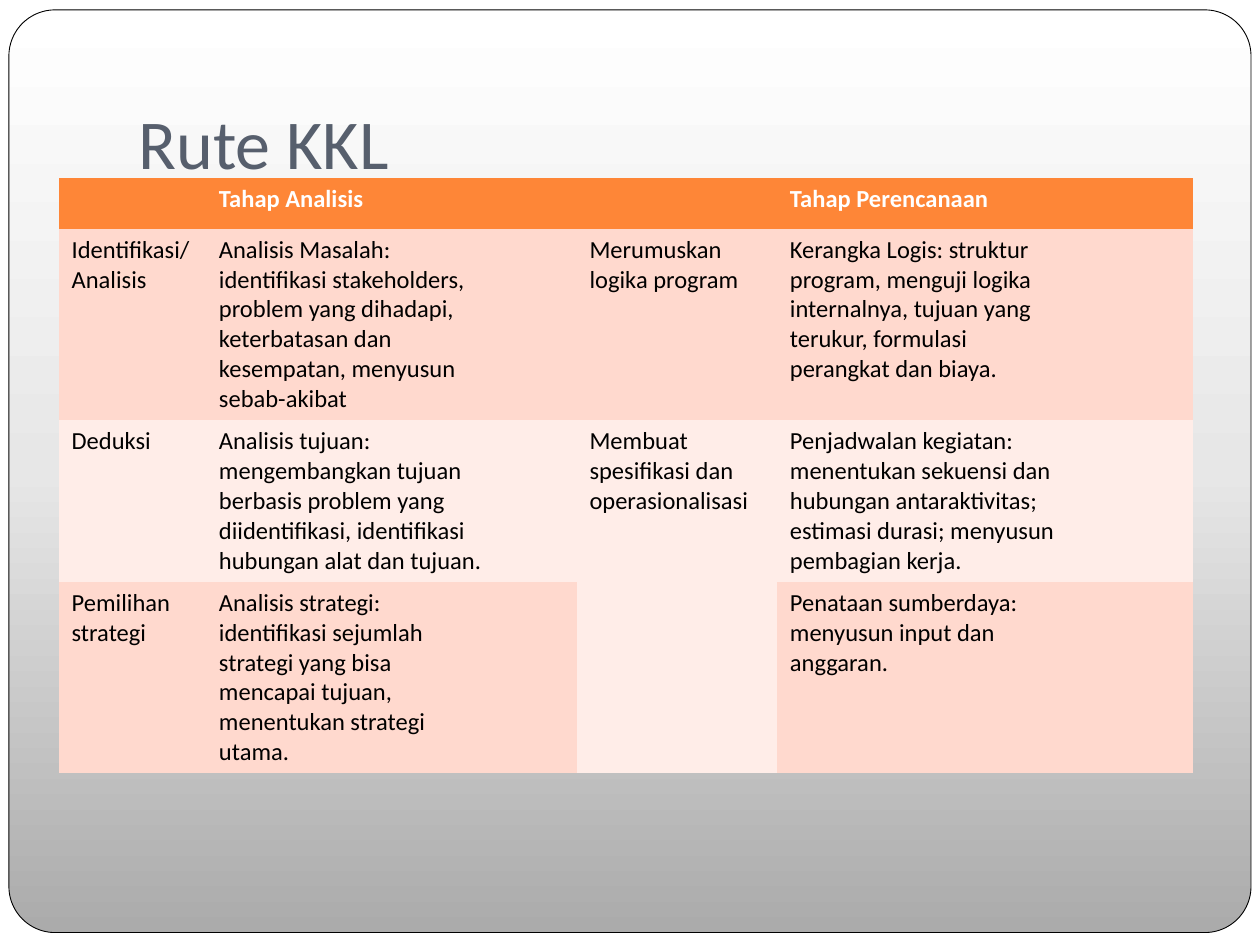
from copy import deepcopy

from pptx import Presentation
from pptx.dml.color import RGBColor
from pptx.enum.shapes import MSO_SHAPE as SHAPE
from pptx.enum.text import MSO_ANCHOR as ANCHOR, MSO_AUTO_SIZE as AUTOSIZE, PP_ALIGN as ALIGN
from pptx.oxml.ns import qn
from pptx.util import Cm, Pt

PANEL_STOPS = [(0, "ABABAB"), (0.5, "E7E7E7"), (1, "FFFFFF")]
COL_WIDTHS = [2.97, 7.47, 4.04, 8.38]
ROW_HEIGHT = 1.03
ROWS = [
    ["", "Tahap Analisis", "", "Tahap Perencanaan"],
    ["Identifikasi/\nAnalisis",
     "Analisis Masalah:\nidentifikasi stakeholders,\nproblem yang dihadapi,\n"
     "keterbatasan dan\nkesempatan, menyusun\nsebab-akibat",
     "Merumuskan\nlogika program",
     "Kerangka Logis: struktur\nprogram, menguji logika\ninternalnya, tujuan yang\n"
     "terukur, formulasi\nperangkat dan biaya."],
    ["Deduksi",
     "Analisis tujuan:\nmengembangkan tujuan\nberbasis problem yang\n"
     "diidentifikasi, identifikasi\nhubungan alat dan tujuan.",
     "Membuat\nspesifikasi dan\noperasionalisasi",
     "Penjadwalan kegiatan:\nmenentukan sekuensi dan\nhubungan antaraktivitas;\n"
     "estimasi durasi; menyusun\npembagian kerja."],
    ["Pemilihan strategi",
     "Analisis strategi:\nidentifikasi sejumlah\nstrategi yang bisa\n"
     "mencapai tujuan,\nmenentukan strategi\nutama.",
     "",
     "Penataan sumberdaya:\nmenyusun input dan\nanggaran."],
]


def rgb(color):
    return RGBColor.from_string(color)


class SlideBuilder:
    title_font = {"name": "Calibri", "size": Pt(40), "bold": False, "color": "575F6D"}
    head_font = {"name": "Calibri", "size": Pt(14), "bold": True, "color": "FFFFFF"}
    body_font = {**head_font, "bold": False, "color": "000000"}
    head_fill = "FE8637"
    band_fills = ["FFD9CE", "FFEDE8"]

    def __init__(self, s):
        self.s = s

    def set_text(self, tf, text, font):
        tf.text = text
        for p in tf.paragraphs:
            p.alignment = ALIGN.LEFT
            for r in p.runs:
                for key, value in font.items():
                    if key == "color":
                        r.font.color.rgb = rgb(value)
                    else:
                        setattr(r.font, key, value)

    def background(self, color):
        fill = self.s.background.fill
        fill.solid()
        fill.fore_color.rgb = rgb(color)

    def panel(self, x, y, w, h, stops):
        sp = self.s.shapes.add_shape(SHAPE.ROUNDED_RECTANGLE, Cm(x), Cm(y), Cm(w), Cm(h))
        sp.adjustments[0] = 0.05
        sp.shadow.inherit = False
        sp.line.color.rgb = rgb("000000")
        sp.line.width = Pt(0.5)
        # The default gradient has two stops, so add the third
        sp.fill.gradient()
        sp.fill.gradient_angle = 90
        gs_list = sp.element.spPr.find(".//" + qn("a:gsLst"))
        gs_list.append(deepcopy(gs_list[0]))
        for stop, (position, color) in zip(sp.fill.gradient_stops, stops):
            stop.position = position
            stop.color.rgb = rgb(color)
        # Keep the panel behind the title
        self.s.shapes.title.element.addprevious(sp.element)

    def title(self, text, x, y, w, h):
        sp = self.s.shapes.title
        sp.left, sp.top, sp.width, sp.height = Cm(x), Cm(y), Cm(w), Cm(h)
        tf = sp.text_frame
        layout = {"vertical_anchor": ANCHOR.BOTTOM, "auto_size": AUTOSIZE.NONE,
                  "word_wrap": True, "margin_bottom": Cm(0.25)}
        for key, value in layout.items():
            setattr(tf, key, value)
        self.set_text(tf, text, self.title_font)

    def table(self, rows, x, y, widths, row_height, merges):
        frame = self.s.shapes.add_table(len(rows), len(widths), Cm(x), Cm(y),
                                        Cm(sum(widths)), Cm(row_height * len(rows)))
        table = frame.table
        for column, width in zip(table.columns, widths):
            column.width = Cm(width)
        for i, row in enumerate(rows):
            table.rows[i].height = Cm(row_height)
            color = self.band_fills[(i - 1) % 2] if i else self.head_fill
            font = self.body_font if i else self.head_font
            for j, text in enumerate(row):
                cell = table.cell(i, j)
                cell.fill.solid()
                cell.fill.fore_color.rgb = rgb(color)
                self.set_text(cell.text_frame, text, font)
        for first, last in merges:
            table.cell(*first).merge(table.cell(*last))
        # Use the plain style, which draws no cell borders
        style = frame.element.find(".//" + qn("a:tableStyleId"))
        style.text = "{2D5ABB26-0587-4C30-8999-92F81FD0307C}"


def main():
    prs = Presentation()
    prs.slide_width, prs.slide_height = Cm(25.4), Cm(19.05)
    b = SlideBuilder(prs.slides.add_slide(prs.slide_layouts[5]))

    # Backdrop
    b.background("FFFFFF")
    b.panel(0.18, 0.2, 25.04, 18.6, PANEL_STOPS)

    # Title and route table
    b.title("Rute KKL", 2.54, 0.76, 21.59, 3.18)
    b.table(ROWS, 1.19, 3.58, COL_WIDTHS, ROW_HEIGHT, merges=[((2, 2), (3, 2))])

    prs.save("out.pptx")


if __name__ == "__main__":
    main()
